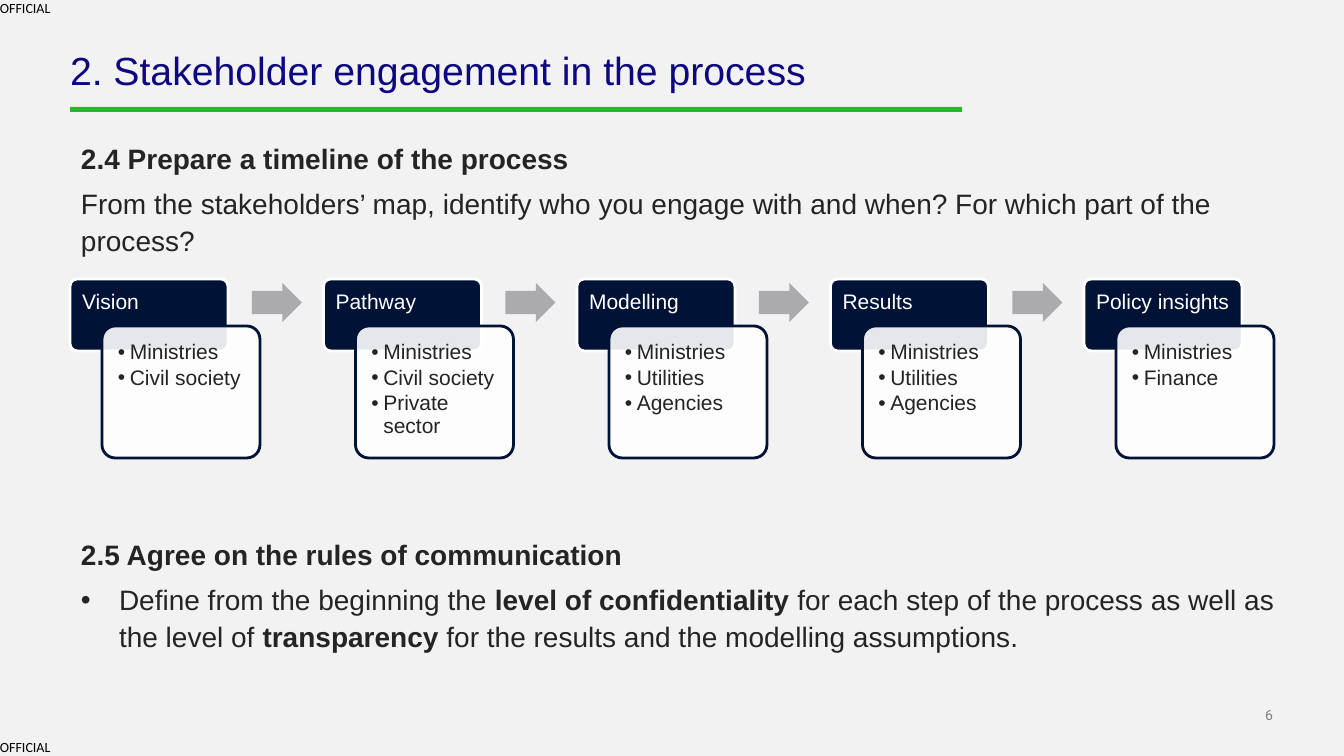
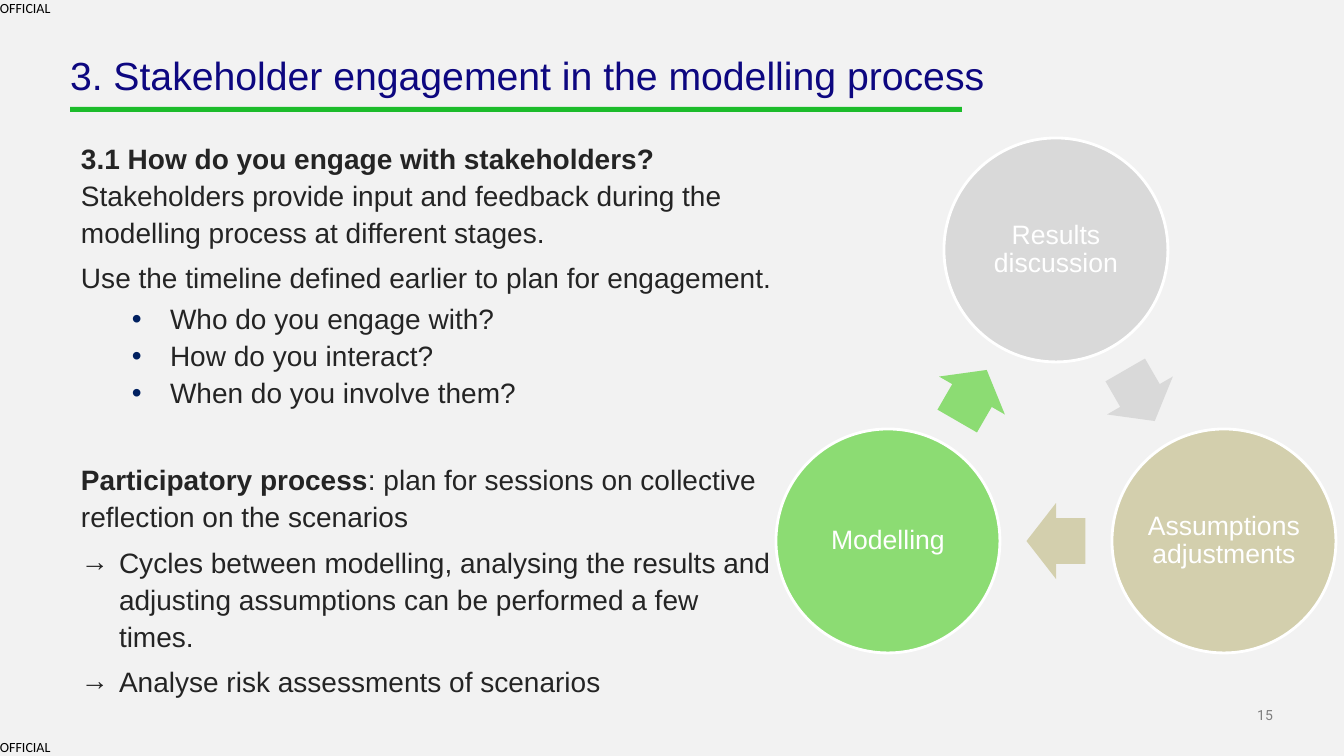
import math
from dataclasses import dataclass

import lxml.etree
import pptx
import pptx.dml.color
import pptx.enum.shapes
import pptx.enum.text
import pptx.oxml.ns
import pptx.util

ALIGN = pptx.enum.text.PP_ALIGN
ANCHOR = pptx.enum.text.MSO_ANCHOR
SHAPE = pptx.enum.shapes.MSO_SHAPE
qn = pptx.oxml.ns.qn

PAGE_WIDTH, PAGE_HEIGHT = 1344, 756
EMU_PER_PX = 12192000 / PAGE_WIDTH


@dataclass(frozen=True)
class Theme:
    # Colours
    paper: str = "F2F2F2"
    title: str = "0D0780"
    rule: str = "1CBC2B"
    text: str = "242424"
    marking: str = "000000"
    number: str = "7F7F7F"
    navy: str = "001236"
    sub_bullet: str = "002060"
    white: str = "FFFFFF"
    step_arrow: str = "ABABAE"
    grey: str = "D9D9D9"
    sand: str = "D3CFAD"
    green: str = "8CDC73"
    # Fonts and type sizes
    font: str = "Arial"
    marking_font: str = "Calibri"
    number_font: str = "Roboto"
    title_size: int = 28
    body_size: int = 20
    cycle_size: int = 19
    step_size: int = 15
    small_size: int = 10


THEME = Theme()


@dataclass(frozen=True)
class ParaStyle:
    indent: int = 0
    hang: int = 0
    line: float = 1.1
    before: int = 3
    after: int = 3
    bullet: str = ""
    bullet_color: str = THEME.text
    level: int = 0


SINGLE = ParaStyle(line=1.0, before=0, after=0)
TIGHT = ParaStyle(line=0.9, before=0, after=0)
STEP_ITEM = ParaStyle(12, 12, 0.9, 0, 2, "•")
PLAIN = ParaStyle(11)
LEAD = ParaStyle(11, after=0)
LEAD_TEXT = ParaStyle(11, before=0)
NEW_PART = ParaStyle(11, before=36)
BULLET = ParaStyle(49, 38, bullet="•")
ARROW = ParaStyle(49, 38, bullet="→")
SUB_BULLET = ParaStyle(100, 38, before=0, after=0, bullet="•",
                       bullet_color=THEME.sub_bullet, level=1)


def px(length):
    return pptx.util.Emu(round(length * EMU_PER_PX))


def rgb(color):
    return pptx.dml.color.RGBColor.from_string(color)


def place(shape, box):
    shape.left, shape.top, shape.width, shape.height = map(px, box)


def style_para(para, style, align):
    para.alignment = align
    para.level = style.level
    para.line_spacing = style.line
    para.space_before = pptx.util.Pt(style.before)
    para.space_after = pptx.util.Pt(style.after)
    props = para._p.get_or_add_pPr()
    props.set("marL", str(px(style.indent)))
    props.set("indent", str(px(-style.hang)))
    if not style.bullet:
        lxml.etree.SubElement(props, qn("a:buNone"))
        return
    color = lxml.etree.SubElement(props, qn("a:buClr"))
    lxml.etree.SubElement(color, qn("a:srgbClr"), val=style.bullet_color)
    lxml.etree.SubElement(props, qn("a:buFont"), typeface=THEME.font)
    lxml.etree.SubElement(props, qn("a:buChar"), char=style.bullet)


def fill_text(shape, lines, size, color=THEME.text, font=THEME.font,
              align=ALIGN.LEFT, anchor=ANCHOR.TOP, margins=(0, 0, 0, 0), wrap=True):
    """Write (style, text) lines; text between asterisks is bold."""
    frame = shape.text_frame
    frame.auto_size = pptx.enum.text.MSO_AUTO_SIZE.NONE
    frame.word_wrap = wrap
    frame.vertical_anchor = anchor
    (frame.margin_left, frame.margin_top,
     frame.margin_right, frame.margin_bottom) = map(px, margins)
    for index, (style, text) in enumerate(lines):
        para = frame.add_paragraph() if index else frame.paragraphs[0]
        style_para(para, style, align)
        for part, words in enumerate(text.split("*")):
            if not words:
                continue
            span = para.add_run()
            span.text = words
            span.font.name = font
            span.font.size = pptx.util.Pt(size)
            span.font.bold = part % 2 == 1
            span.font.color.rgb = rgb(color)


def add_text(page, box, lines, size, **options):
    shape = page.shapes.add_textbox(*map(px, box))
    fill_text(shape, lines, size, **options)


def add_shape(page, kind, box, fill, line=None, opacity=100):
    shape = page.shapes.add_shape(kind, *map(px, box))
    shape.shadow.inherit = False
    shape.fill.solid()
    shape.fill.fore_color.rgb = rgb(fill)
    if opacity < 100:
        color = shape.fill._xPr.find(qn("a:solidFill"))[0]
        lxml.etree.SubElement(color, qn("a:alpha"), val=str(opacity * 1000))
    if line:
        shape.line.color.rgb = rgb(line)
        shape.line.width = pptx.util.Pt(2)
    else:
        shape.line.fill.background()
    return shape


def add_arrow(page, box, fill, rotation=0):
    arrow = add_shape(page, SHAPE.RIGHT_ARROW, box, fill)
    arrow.adjustments[0], arrow.adjustments[1] = 0.6, 0.5
    arrow.rotation = rotation


def add_page(deck, number, title, title_box, body, body_box):
    """Page with markings, number, rule, title and body."""
    page = deck.slides.add_slide(deck.slide_layouts[1])
    add_text(page, (1231, 706, 42, 17), [(SINGLE, str(number))], THEME.small_size,
             color=THEME.number, font=THEME.number_font,
             align=ALIGN.RIGHT, anchor=ANCHOR.BOTTOM)
    for top in (0, PAGE_HEIGHT - 17):
        add_text(page, (0, top, 53, 17), [(SINGLE, "OFFICIAL")], THEME.small_size,
                 color=THEME.marking, font=THEME.marking_font, wrap=False)
    add_shape(page, SHAPE.RECTANGLE, (70, 107, 892, 5), THEME.rule)
    place(page.shapes.title, title_box)
    fill_text(page.shapes.title, [(TIGHT, title)], THEME.title_size, color=THEME.title)
    place(page.placeholders[1], body_box)
    fill_text(page.placeholders[1], body, THEME.body_size)
    return page


def add_steps(page, box, steps):
    """Row of headed cards with an arrow between neighbours."""
    left, top, width, height = box
    card_width, shift, drop = 158, 32, 47
    pitch = (width - card_width - shift) / (len(steps) - 1)
    for index, (heading, members) in enumerate(steps):
        x = left + index * pitch
        header = add_shape(page, SHAPE.ROUNDED_RECTANGLE, (x, top, card_width, 72),
                           THEME.navy, THEME.white)
        fill_text(header, [(TIGHT, heading)], THEME.step_size, color=THEME.white,
                  margins=(10, 10, 4, 6))
        card = add_shape(page, SHAPE.ROUNDED_RECTANGLE,
                         (x + shift, top + drop, card_width, height - drop),
                         THEME.white, THEME.navy, opacity=90)
        fill_text(card, [(STEP_ITEM, member) for member in members], THEME.step_size,
                  margins=(12, 12, 12, 12))
        for shape in (header, card):
            shape.adjustments[0] = 0.1
        if index < len(steps) - 1:
            add_arrow(page, (x + 182, top + 4, 50, 39), THEME.step_arrow)


def add_cycle(page, box, stages):
    """Circles spaced evenly round a ring, clockwise from the top."""
    left, top, width, height = box
    diameter, ring, arrow_width, arrow_height = 224, 194, 59, 76
    center_x, center_y = left + width / 2, top + diameter / 2 + ring
    turn = 360 / len(stages)

    def box_at(angle, radius, wide, high):
        x = center_x + radius * math.sin(math.radians(angle))
        y = center_y - radius * math.cos(math.radians(angle))
        return x - wide / 2, y - high / 2, wide, high

    for index, (label, color) in enumerate(stages):
        angle = index * turn
        circle = add_shape(page, SHAPE.OVAL, box_at(angle, ring, diameter, diameter),
                           color, THEME.white)
        fill_text(circle, [(TIGHT, label)], THEME.cycle_size, color=THEME.white,
                  align=ALIGN.CENTER, anchor=ANCHOR.MIDDLE)
        middle = angle + turn / 2
        add_arrow(page, box_at(middle, ring / 2, arrow_width, arrow_height),
                  color, rotation=middle)


def build_timeline_page(deck):
    page = add_page(
        deck, 6, "2. Stakeholder engagement in the process", (70, 52, 893, 42),
        [(PLAIN, "*2.4 Prepare a timeline of the process*"),
         (PLAIN, "From the stakeholders’ map, identify who you engage with and when? "
                 "For which part of the process?")],
        (70, 138, 1206, 150))
    add_steps(page, (70, 279, 1204, 179), [
        ("Vision", ["Ministries", "Civil society"]),
        ("Pathway", ["Ministries", "Civil society", "Private sector"]),
        ("Modelling", ["Ministries", "Utilities", "Agencies"]),
        ("Results", ["Ministries", "Utilities", "Agencies"]),
        ("Policy insights", ["Ministries", "Finance"]),
    ])
    add_text(page, (70, 534, 1206, 222), [
        (PLAIN, "*2.5 Agree on the rules of communication*"),
        (BULLET, "Define from the beginning the *level of confidentiality *for each step "
                 "of the process as well as the level of *transparency* for the results "
                 "and the modelling assumptions."),
    ], THEME.body_size)


def build_cycle_page(deck):
    page = add_page(
        deck, 15, "3. Stakeholder engagement in the modelling process", (70, 57, 923, 86),
        [(LEAD, "*3.1 How do you engage with stakeholders?*"),
         (LEAD_TEXT, "Stakeholders provide input and feedback during the modelling "
                     "process at different stages."),
         (PLAIN, "Use the timeline defined earlier to plan for engagement."),
         (SUB_BULLET, "Who do you engage with?"),
         (SUB_BULLET, "How do you interact?"),
         (SUB_BULLET, "When do you involve them?"),
         (NEW_PART, "*Participatory process*: plan for sessions on collective reflection "
                    "on the scenarios"),
         (ARROW, "Cycles between modelling, analysing the results and adjusting "
                 "assumptions can be performed a few times."),
         (ARROW, "Analyse risk assessments of scenarios")],
        (70, 138, 704, 542))
    add_cycle(page, (776, 138, 560, 515), [
        ("Results discussion", THEME.grey),
        ("Assumptions adjustments", THEME.sand),
        ("Modelling", THEME.green),
    ])


def main():
    deck = pptx.Presentation()
    deck.slide_width, deck.slide_height = px(PAGE_WIDTH), px(PAGE_HEIGHT)
    paper = deck.slide_master.background.fill
    paper.solid()
    paper.fore_color.rgb = rgb(THEME.paper)
    build_timeline_page(deck)
    build_cycle_page(deck)
    deck.save("out.pptx")


if __name__ == "__main__":
    main()
